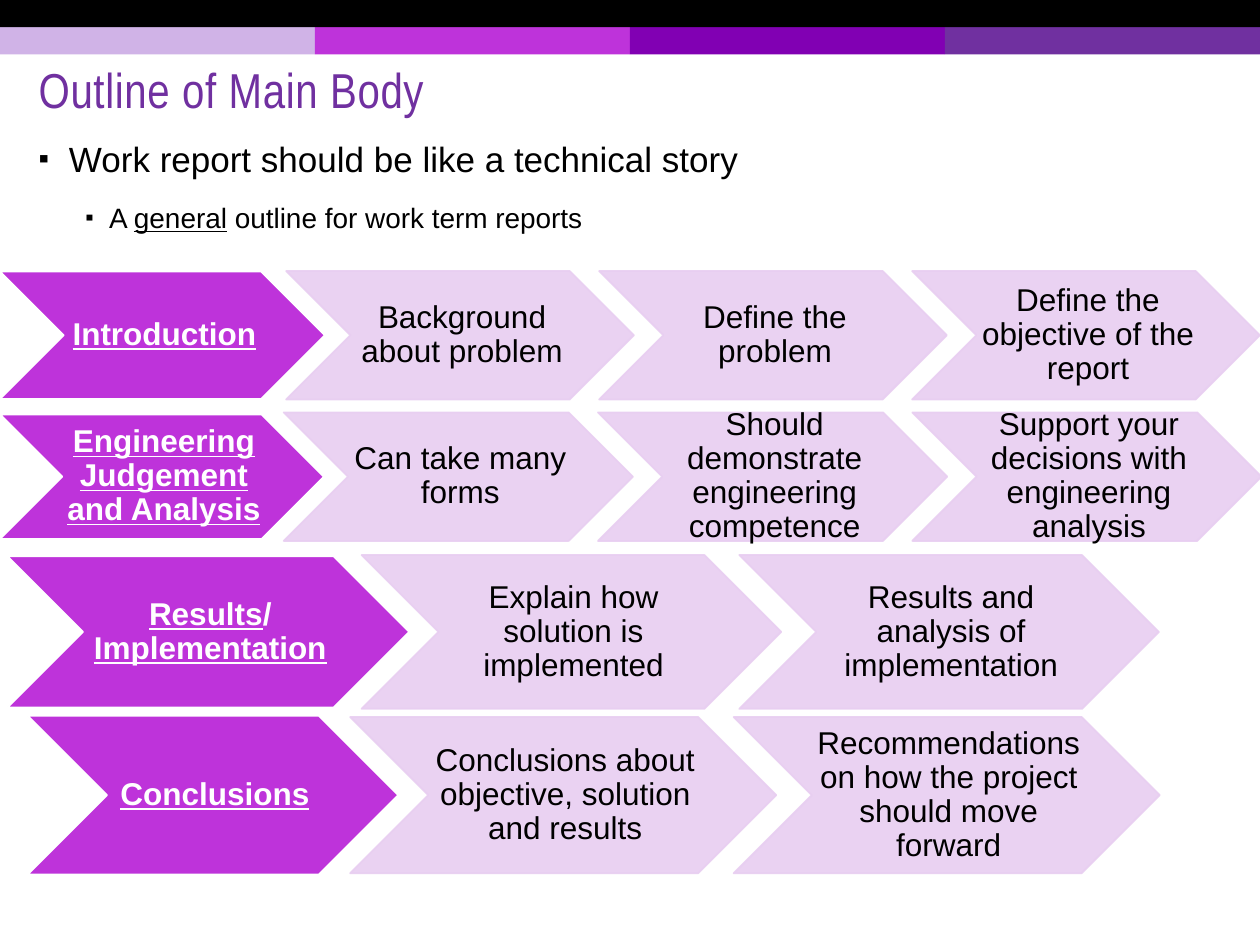
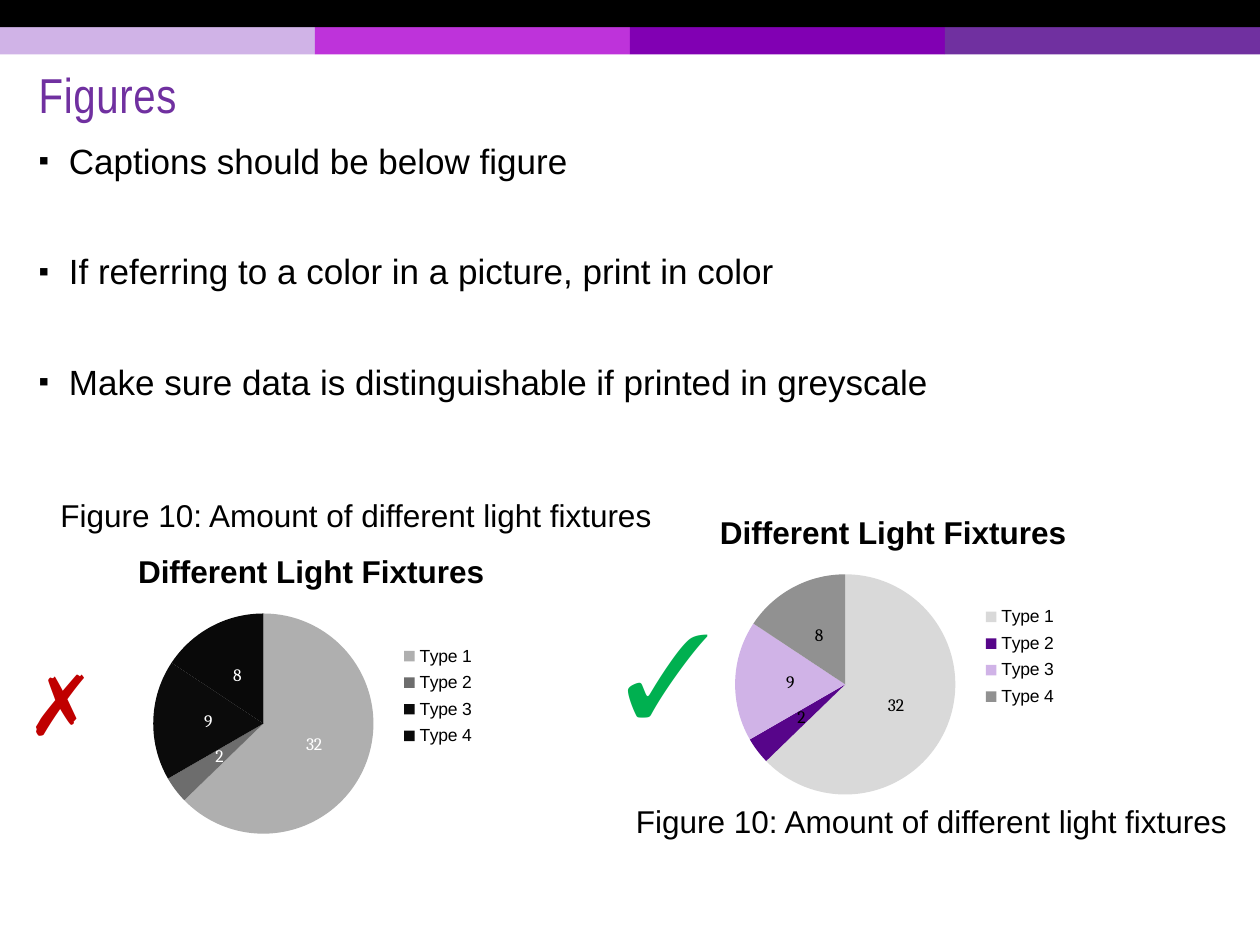
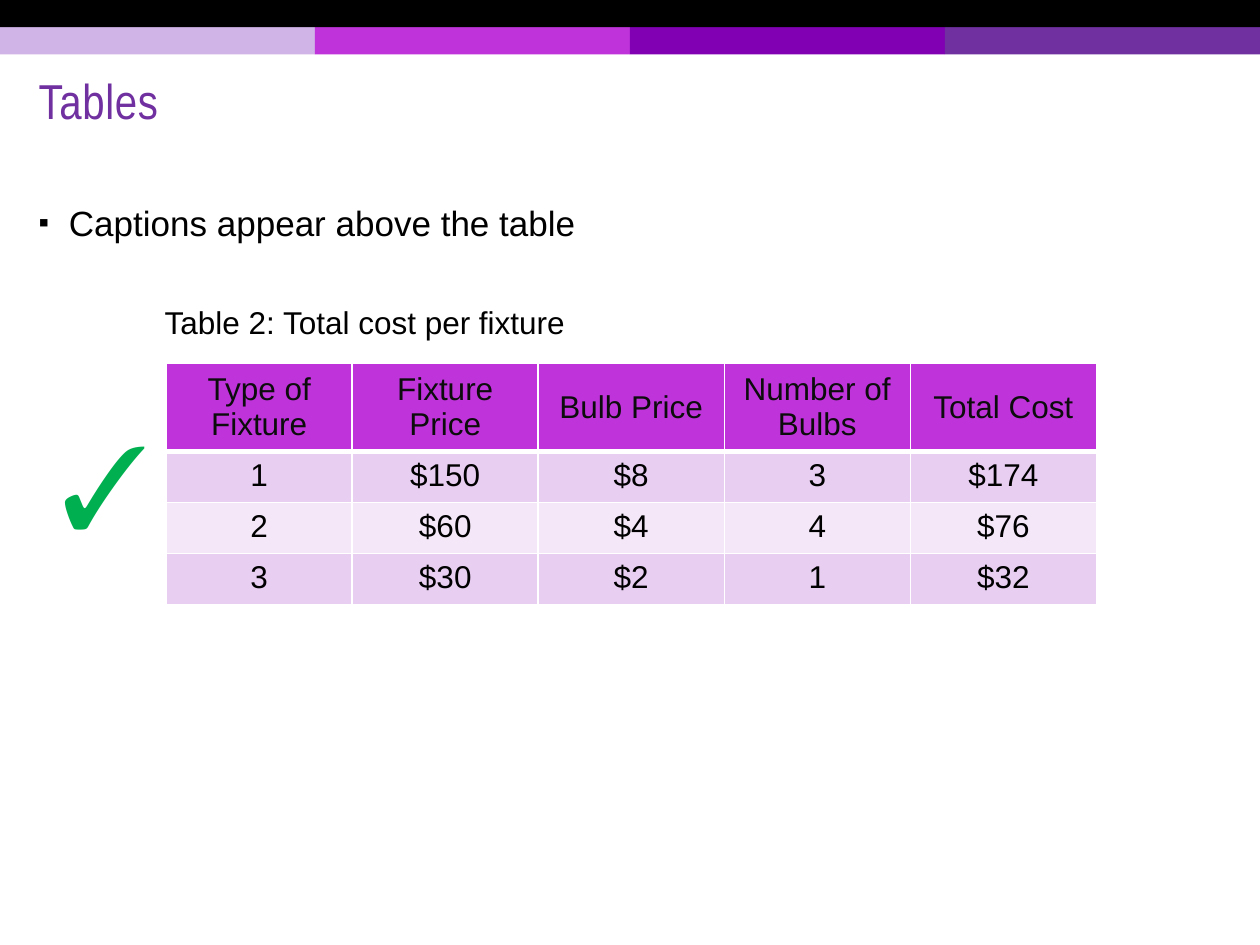
"""Builds three slides on report structure, figures and tables."""
from lxml.etree import SubElement
from pptx import Presentation
from pptx.chart.data import CategoryChartData
from pptx.dml.color import RGBColor
from pptx.enum.chart import XL_CHART_TYPE, XL_LABEL_POSITION, XL_LEGEND_POSITION
from pptx.enum.shapes import MSO_SHAPE
from pptx.enum.text import MSO_ANCHOR, MSO_AUTO_SIZE, PP_ALIGN
from pptx.oxml.ns import qn
from pptx.util import Cm, Pt

BLACK = RGBColor(0x00, 0x00, 0x00)
WHITE = RGBColor(0xFF, 0xFF, 0xFF)
PURPLE = RGBColor(0x70, 0x30, 0xA0)
LILAC = RGBColor(0xD0, 0xB3, 0xE7)
MAGENTA = RGBColor(0xBE, 0x33, 0xDA)
VIOLET = RGBColor(0x81, 0x00, 0xB3)
PALE = RGBColor(0xE8, 0xCE, 0xF1)
PALEST = RGBColor(0xF4, 0xE8, 0xF8)
INK = RGBColor(0x0C, 0x0C, 0x0C)
RED = RGBColor(0xC0, 0x00, 0x00)
GREEN = RGBColor(0x00, 0xB0, 0x50)
DULL_SLICES = [RGBColor(0xAF, 0xAF, 0xAF), RGBColor(0x6D, 0x6D, 0x6D),
               RGBColor(0x0B, 0x0B, 0x0B), RGBColor(0x09, 0x09, 0x09)]
CLEAR_SLICES = [RGBColor(0xD9, 0xD9, 0xD9), RGBColor(0x57, 0x05, 0x8A),
                LILAC, RGBColor(0x91, 0x91, 0x91)]

BODY_FONT, TITLE_FONT, MARK_FONT = "Arial", "Arial Narrow", "Cambria"
PAGE_WIDTH, PAGE_HEIGHT = 25.4, 19.05
BAND_HEIGHT = 0.55
BANDS = [LILAC, MAGENTA, VIOLET, PURPLE]
MARGIN = 0.53

BULLET_LEVELS = [(20, 0.61, 0.61), (16, 1.42, 0.48)]
STORY_POINTS = [
    (0, ["Work report should be like a technical story"]),
    (1, ["A ", "_general", " outline for work term reports"]),
]
FIGURE_POINTS = [
    (0, ["Captions should be below figure"]),
    (0, ["If referring to a color in a picture, print in color"]),
    (0, ["Make sure data is distinguishable if printed in greyscale"]),
]
TABLE_POINTS = [(0, ["Captions appear above the table"])]

STAGES = [
    {"middle": 6.76, "lead": (0, 6.55, 2.57), "detail": (5.77, 7.01, 2.59),
     "name": ["_Introduction"],
     "steps": ["Background about problem", "Define the problem",
               "Define the objective of the report"]},
    {"middle": 9.61, "lead": (0, 6.53, 2.51), "detail": (5.72, 7.04, 2.59),
     "name": ["_Engineering Judgement and Analysis"],
     "steps": ["Can take many forms", "Should demonstrate engineering competence",
               "Support your decisions with engineering analysis"]},
    {"middle": 12.74, "lead": (0.15, 8.1, 3.05), "detail": (7.29, 8.46, 3.1),
     "name": ["_Results", "/ ", "_Implementation"],
     "steps": ["Explain how solution is implemented",
               "Results and analysis of implementation"]},
    {"middle": 16.03, "lead": (0.56, 7.47, 3.2), "detail": (7.06, 8.59, 3.15),
     "name": ["_Conclusions"],
     "steps": ["Conclusions about objective, solution and results",
               "Recommendations on how the project should move forward"]},
]
STEP_PITCH = 0.9

CHART_TITLE = "Different Light Fixtures"
CAPTION = "Figure 10: Amount of different light fixtures"
FIXTURE_COUNTS = {"Type 1": 32, "Type 2": 2, "Type 3": 9, "Type 4": 8}
CHECK, CROSS = ("✓", 66, GREEN), ("✗", 48, RED)
FIGURES = [
    {"chart": (1.3, 10.67), "slices": DULL_SLICES, "labels": WHITE,
     "caption": (0.97, 9.88), "mark": CROSS, "mark_box": (0.48, 12.9, 1.6, 2.31)},
    {"chart": (13.03, 9.88), "slices": CLEAR_SLICES, "labels": BLACK,
     "caption": (12.57, 16.05), "mark": CHECK, "mark_box": (12.34, 11.99, 2.36, 3.07)},
]

COSTS = [
    ("Type of Fixture", "Fixture Price", "Bulb Price", "Number of Bulbs", "Total Cost"),
    ("1", "$150", "$8", "3", "$174"),
    ("2", "$60", "$4", "4", "$76"),
    ("3", "$30", "$2", "1", "$32"),
]
COLUMN_WIDTH, HEADER_HEIGHT, ROW_HEIGHT = 3.75, 1.65, 1.03


def style(span, size, color, name=BODY_FONT, bold=False):
    span.font.size = Pt(size)
    span.font.name = name
    span.font.bold = bold
    span.font.color.rgb = color


def add_spans(para, parts, size, color, bold=False):
    """Adds runs; a part that starts with an underscore is underlined."""
    for part in parts:
        span = para.add_run()
        span.text = part.removeprefix("_")
        style(span, size, color, bold=bold)
        span.font.underline = part.startswith("_")


def add_block(page, kind, place, fill):
    block = page.shapes.add_shape(kind, *map(Cm, place))
    block.shadow.inherit = False
    block.fill.solid()
    block.fill.fore_color.rgb = fill
    block.line.fill.background()
    return block


def add_label(page, place, text, size, color, name=BODY_FONT):
    box = page.shapes.add_textbox(*map(Cm, place))
    box.text_frame.word_wrap = False
    box.text_frame.auto_size = MSO_AUTO_SIZE.SHAPE_TO_FIT_TEXT
    box.text_frame.text = text
    style(box.text_frame.paragraphs[0].runs[0], size, color, name)


def add_mark(page, place, mark):
    add_label(page, place, *mark, MARK_FONT)


def start_page(deck, title, top):
    page = deck.slides.add_slide(deck.slide_layouts[6])
    width = PAGE_WIDTH / len(BANDS)
    for index, color in enumerate(BANDS):
        add_block(page, MSO_SHAPE.RECTANGLE,
                  (index * width, BAND_HEIGHT, width, BAND_HEIGHT), color)
    add_block(page, MSO_SHAPE.RECTANGLE, (0, 0, PAGE_WIDTH, BAND_HEIGHT), BLACK)
    box = page.shapes.add_textbox(Cm(MARGIN), Cm(top), Cm(24.1), Cm(2.49))
    frame = box.text_frame
    frame.word_wrap = True
    frame.vertical_anchor = MSO_ANCHOR.MIDDLE
    frame.text = title
    para = frame.paragraphs[0]
    para.line_spacing = 0.85
    span = para.runs[0]
    style(span, 28, PURPLE, TITLE_FONT)
    span.font._element.set("spc", "40")
    return page


def add_bullet(para, margin, hanging):
    properties = para._p.get_or_add_pPr()
    properties.set("marL", str(Cm(margin)))
    properties.set("indent", str(-Cm(hanging)))
    color = SubElement(properties, qn("a:buClr"))
    SubElement(color, qn("a:srgbClr"), val=str(BLACK))
    SubElement(properties, qn("a:buSzPct"), val="85000")
    SubElement(properties, qn("a:buFont"), typeface=BODY_FONT)
    SubElement(properties, qn("a:buChar"), char="▪")


def add_points(page, place, points, space_before=6):
    frame = page.shapes.add_textbox(*map(Cm, place)).text_frame
    frame.word_wrap = True
    for index, (level, parts) in enumerate(points):
        para = frame.add_paragraph() if index else frame.paragraphs[0]
        size, margin, hanging = BULLET_LEVELS[level]
        para.level = level
        add_bullet(para, margin, hanging)
        if index:
            para.space_before = Pt(space_before)
        para.space_after = Pt(6)
        add_spans(para, parts, size, BLACK)


def add_chevron(page, left, middle, size, parts, fill, line, color, bold):
    width, height = size
    chevron = add_block(page, MSO_SHAPE.CHEVRON,
                        (left, middle - height / 2, width, height), fill)
    chevron.line.color.rgb = line
    chevron.line.width = Pt(1)
    frame = chevron.text_frame
    frame.word_wrap = True
    frame.vertical_anchor = MSO_ANCHOR.MIDDLE
    frame.margin_left, frame.margin_right = Cm(0.08), 0
    frame.margin_top = frame.margin_bottom = Cm(0.03)
    para = frame.paragraphs[0]
    para.alignment = PP_ALIGN.CENTER
    para.line_spacing = 0.9
    add_spans(para, parts, 18, color, bold)
    return chevron


def add_stage(page, stage):
    left, *size = stage["lead"]
    add_chevron(page, left, stage["middle"], size, stage["name"],
                MAGENTA, WHITE, WHITE, True)
    left, *size = stage["detail"]
    for index, step in enumerate(stage["steps"]):
        chevron = add_chevron(page, left + index * STEP_PITCH * size[0],
                              stage["middle"], size, [step], PALE, PALE, BLACK, False)
        for color in list(chevron._element.spPr.iter(qn("a:srgbClr"))):
            SubElement(color, qn("a:alpha"), val="90000")


def set_layout(parent, position, inner=False, **fractions):
    """Fixes a chart part at fractions of the chart area."""
    for old in parent.findall(qn("c:layout")):
        parent.remove(old)
    layout = SubElement(parent, qn("c:layout"))
    parent.insert(position, layout)
    manual = SubElement(layout, qn("c:manualLayout"))
    if inner:
        SubElement(manual, qn("c:layoutTarget"), val="inner")
    for axis in "xy":
        SubElement(manual, qn(f"c:{axis}Mode"), val="edge")
    for key, value in fractions.items():
        SubElement(manual, qn(f"c:{key}"), val=str(value))


def add_pie(page, corner, slices, label_color):
    data = CategoryChartData()
    data.categories = list(FIXTURE_COUNTS)
    data.add_series("Series 1", list(FIXTURE_COUNTS.values()))
    left, top = corner
    chart = page.shapes.add_chart(XL_CHART_TYPE.PIE, Cm(left), Cm(top),
                                  Cm(9.78), Cm(6.53), data).chart
    chart.font.size, chart.font.name = Pt(10), MARK_FONT
    chart.font.color.rgb = BLACK
    chart.has_title = True
    title = chart.chart_title
    title.text_frame.text = CHART_TITLE
    style(title.text_frame.paragraphs[0].runs[0], 18, BLACK, bold=True)
    set_layout(title._element, 1, x=0.14, y=0.05)
    chart.has_legend = True
    legend = chart.legend
    legend.position = XL_LEGEND_POSITION.RIGHT
    legend.include_in_layout = False
    legend.font.size, legend.font.name = Pt(10), BODY_FONT
    legend.font.color.rgb = BLACK
    set_layout(legend._element, 1, x=0.67, y=0.34, w=0.2, h=0.35)
    plot = chart.plots[0]
    plot.vary_by_categories = True
    set_layout(chart._chartSpace.chart.plotArea, 0, inner=True,
               x=0.18, y=0.26, w=0.46, h=0.68)
    series = plot.series[0]
    for index, color in enumerate(slices):
        fill = series.points[index].format.fill
        fill.solid()
        fill.fore_color.rgb = color
    plot.has_data_labels = True
    labels = plot.data_labels
    labels.show_value = True
    labels.show_percentage = False
    labels.position = XL_LABEL_POSITION.CENTER
    labels.font.size, labels.font.name = Pt(10), MARK_FONT
    labels.font.color.rgb = label_color


def add_borders(cell, bottom_width):
    properties = cell._tc.get_or_add_tcPr()
    widths = {"lnL": 1, "lnR": 1, "lnT": 1, "lnB": bottom_width}
    for index, (side, width) in enumerate(widths.items()):
        line = SubElement(properties, qn(f"a:{side}"), w=str(Pt(width)))
        properties.insert(index, line)
        fill = SubElement(line, qn("a:solidFill"))
        SubElement(fill, qn("a:srgbClr"), val=str(WHITE))


def add_costs(page, left, top):
    rows, columns = len(COSTS), len(COSTS[0])
    height = HEADER_HEIGHT + (rows - 1) * ROW_HEIGHT
    table = page.shapes.add_table(rows, columns, Cm(left), Cm(top),
                                  Cm(columns * COLUMN_WIDTH), Cm(height)).table
    for column in table.columns:
        column.width = Cm(COLUMN_WIDTH)
    for row_index, values in enumerate(COSTS):
        header = row_index == 0
        table.rows[row_index].height = Cm(HEADER_HEIGHT if header else ROW_HEIGHT)
        shade = MAGENTA if header else (PALEST, PALE)[row_index % 2]
        for column_index, value in enumerate(values):
            cell = table.cell(row_index, column_index)
            cell.fill.solid()
            cell.fill.fore_color.rgb = shade
            add_borders(cell, 3 if header else 1)
            cell.vertical_anchor = MSO_ANCHOR.MIDDLE if header else MSO_ANCHOR.TOP
            cell.text_frame.text = value
            para = cell.text_frame.paragraphs[0]
            para.alignment = PP_ALIGN.CENTER
            style(para.runs[0], 18, INK if header else BLACK)


def build_outline(deck):
    page = start_page(deck, "Outline of Main Body", 0.64)
    add_points(page, (MARGIN, 2.64, 19.08, 2.6), STORY_POINTS)
    for stage in STAGES:
        add_stage(page, stage)


def build_figures(deck):
    page = start_page(deck, "Figures", 0.74)
    add_points(page, (MARGIN, 2.69, 19.08, 7.01), FIGURE_POINTS, space_before=33)
    for figure in FIGURES:
        add_pie(page, figure["chart"], figure["slices"], figure["labels"])
        add_label(page, (*figure["caption"], 12.55, 1.02), CAPTION, 18, BLACK)
        add_mark(page, figure["mark_box"], figure["mark"])


def build_tables(deck):
    page = start_page(deck, "Tables", 0.86)
    add_points(page, (MARGIN, 3.94, 24.1, 1.5), TABLE_POINTS)
    add_costs(page, 3.35, 7.32)
    add_label(page, (3.07, 5.99, 8.66, 1.02), "Table 2: Total cost per fixture", 18, BLACK)
    add_mark(page, (0.99, 8.2, 2.36, 3.07), CHECK)


def main():
    deck = Presentation()
    deck.slide_width, deck.slide_height = Cm(PAGE_WIDTH), Cm(PAGE_HEIGHT)
    build_outline(deck)
    build_figures(deck)
    build_tables(deck)
    deck.save("out.pptx")


if __name__ == "__main__":
    main()
